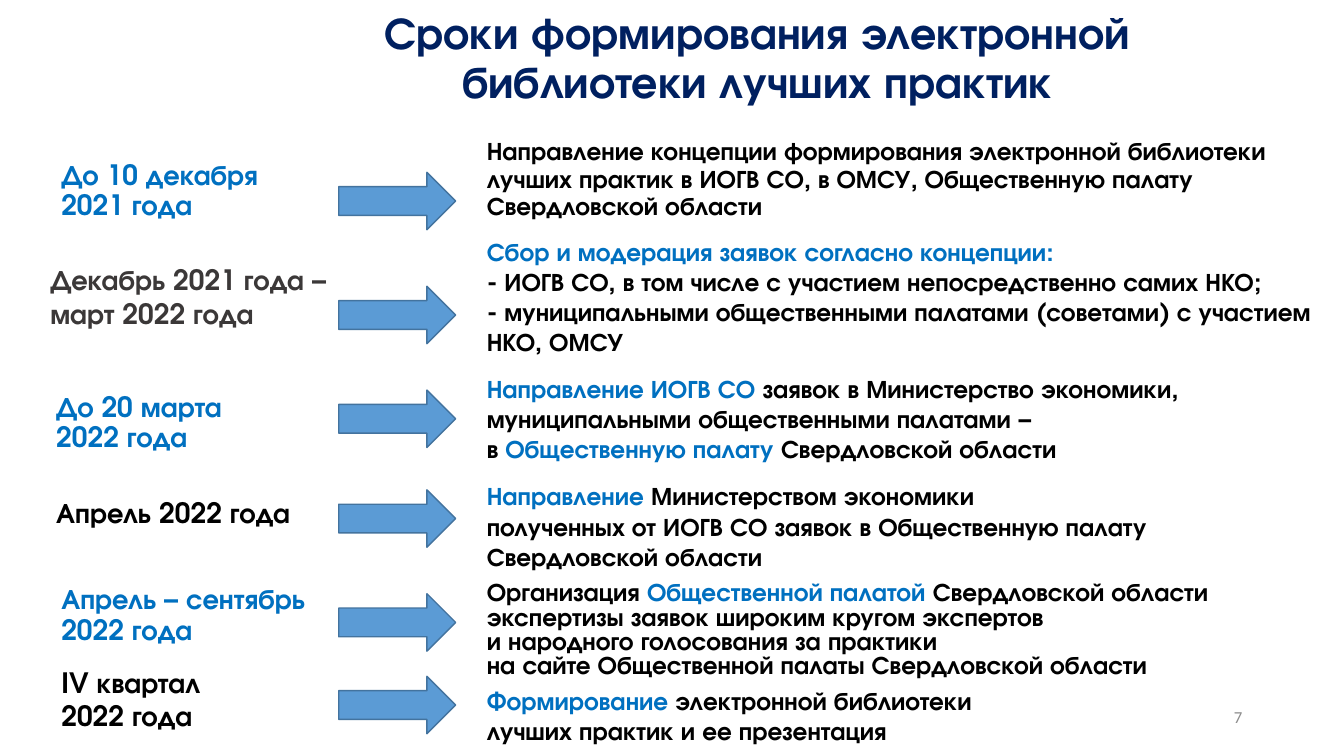
"""Build the slide with the timeline for the electronic library of best practices."""
import pptx
import pptx.dml.color
import pptx.enum.shapes
import pptx.enum.text
import pptx.util

Inches = pptx.util.Inches
RGBColor = pptx.dml.color.RGBColor
ANCHOR = pptx.enum.text.MSO_ANCHOR
ALIGN = pptx.enum.text.PP_ALIGN

NAVY = RGBColor(0x00, 0x20, 0x60)
BLUE = RGBColor(0x00, 0x70, 0xC0)
BLACK = RGBColor(0x00, 0x00, 0x00)
CHARCOAL = RGBColor(0x3B, 0x38, 0x38)
GRAY = RGBColor(0x8C, 0x8C, 0x8C)
ARROW_FILL = RGBColor(0x5B, 0x9B, 0xD5)
ARROW_LINE = RGBColor(0x43, 0x73, 0x9E)
MAIN_FONT = "TeX Gyre Adventor"

TITLE = "Сроки формирования электронной библиотеки лучших практик"
PAGE_NUMBER = "7"

PERIODS = [
    {"box": (0.51, 1.3, 3.04, 0.95), "anchor": ANCHOR.BOTTOM, "spacing": 0.9,
     "text": [[("До 10 декабря\n2021 года", BLUE)]]},
    {"box": (0.4, 2.56, 3.09, 0.77),
     "text": [[("Декабрь 2021 года –\nмарт 2022 года", CHARCOAL)]]},
    {"box": (0.46, 3.91, 3.04, 0.64), "anchor": ANCHOR.BOTTOM, "spacing": 0.9,
     "text": [[("До 20 марта", BLUE)], [("2022 года", BLUE)]]},
    {"box": (0.46, 4.99, 4.03, 0.31), "anchor": ANCHOR.BOTTOM, "spacing": 0.9,
     "text": [[("Апрель 2022 года", BLACK)]]},
    {"box": (0.51, 5.95, 4.03, 0.51), "anchor": ANCHOR.BOTTOM, "spacing": 0.9,
     "text": [[("Апрель – сентябрь", BLUE)], [("2022 года", BLUE)]]},
    {"box": (0.51, 6.55, 4.52, 0.77), "align": ALIGN.JUSTIFY,
     "text": [[("IV квартал", BLACK)], [("2022 года", BLACK)]]},
]

ACTIONS = [
    {"box": (4.73, 1.33, 8.52, 1.25), "spacing": 0.9,
     "text": [[("Направление концепции формирования электронной библиотеки лучших практик "
                "в ИОГВ СО, в ОМСУ, Общественную палату Свердловской области", BLACK)]]},
    {"box": (4.73, 2.29, 8.93, 1.31),
     "text": [[("Сбор и модерация заявок согласно концепции:", BLUE)],
              [("- ИОГВ СО, в том числе с участием непосредственно самих НКО;", BLACK)],
              [("- муниципальными общественными палатами (советами) с участием "
                "НКО, ОМСУ", BLACK)]]},
    {"box": (4.73, 3.65, 8.93, 1.01),
     "text": [[("Направление ИОГВ СО ", BLUE),
               ("заявок в Министерство экономики, муниципальными общественными "
                "палатами –\nв ", BLACK),
               ("Общественную палату ", BLUE),
               ("Свердловской области", BLACK)]]},
    {"box": (4.73, 4.72, 7.12, 1.01),
     "text": [[("Направление ", BLUE), ("Министерством экономики", BLACK)],
              [("полученных от ИОГВ СО заявок в Общественную палату "
                "Свердловской области", BLACK)]]},
    {"box": (4.73, 5.73, 9.84, 1.07), "spacing": 0.8,
     "text": [[("Организация ", BLACK),
               ("Общественной палатой ", BLUE),
               ("Свердловской области\nэкспертизы заявок широким кругом экспертов\n"
                "и народного голосования за практики\n"
                "на сайте Общественной палаты Свердловской области", BLACK)]]},
    {"box": (4.73, 6.75, 5.44, 0.67),
     "text": [[("Формирование ", BLUE), ("электронной библиотеки", BLACK)],
              [("лучших практик и ее презентация", BLACK)]]},
]

ARROW_LEFT, ARROW_WIDTH, ARROW_HEIGHT = 3.36, 1.16, 0.57
ARROW_TOPS = [1.71, 2.84, 3.87, 4.86, 5.89, 6.71]


def write_text(shape, box, text, size, anchor=ANCHOR.TOP, align=ALIGN.LEFT,
               spacing=1.0, font=MAIN_FONT, bold=True):
    shape.left, shape.top, shape.width, shape.height = map(Inches, box)
    frame = shape.text_frame
    frame.word_wrap = True
    frame.auto_size = pptx.enum.text.MSO_AUTO_SIZE.NONE
    frame.vertical_anchor = anchor
    for index, runs in enumerate(text):
        paragraph = frame.add_paragraph() if index else frame.paragraphs[0]
        paragraph.alignment = align
        paragraph.line_spacing = spacing
        for content, color in runs:
            for line_index, line in enumerate(content.split("\n")):
                if line_index:
                    paragraph.add_line_break()
                run = paragraph.add_run()
                run.text = line
                run.font.name = font
                run.font.size = pptx.util.Pt(size)
                run.font.bold = bold
                run.font.color.rgb = color


def add_text(slide, size, box, **settings):
    shape = slide.shapes.add_textbox(*map(Inches, box))
    write_text(shape, box, size=size, **settings)


def add_arrow(slide, top):
    arrow = slide.shapes.add_shape(
        pptx.enum.shapes.MSO_SHAPE.RIGHT_ARROW, Inches(ARROW_LEFT), Inches(top),
        Inches(ARROW_WIDTH), Inches(ARROW_HEIGHT))
    arrow.shadow.inherit = False
    arrow.fill.solid()
    arrow.fill.fore_color.rgb = ARROW_FILL
    arrow.line.color.rgb = ARROW_LINE
    arrow.line.width = pptx.util.Pt(1)


def main():
    presentation = pptx.Presentation()
    presentation.slide_width = Inches(13.33)
    presentation.slide_height = Inches(7.5)
    slide = presentation.slides.add_slide(presentation.slide_layouts[5])

    write_text(slide.shapes.title, (2.97, 0.09, 9.09, 1.03), [[(TITLE, NAVY)]], 32,
               anchor=ANCHOR.BOTTOM, align=ALIGN.CENTER, spacing=0.9)
    add_text(slide, 12, (9.42, 6.91, 3, 0.4), text=[[(PAGE_NUMBER, GRAY)]],
             anchor=ANCHOR.MIDDLE, align=ALIGN.RIGHT, font="Calibri", bold=False)
    for period, arrow_top, action in zip(PERIODS, ARROW_TOPS, ACTIONS):
        add_text(slide, 20, **period)
        add_arrow(slide, arrow_top)
        add_text(slide, 18, **action)

    presentation.save("out.pptx")


if __name__ == "__main__":
    main()
